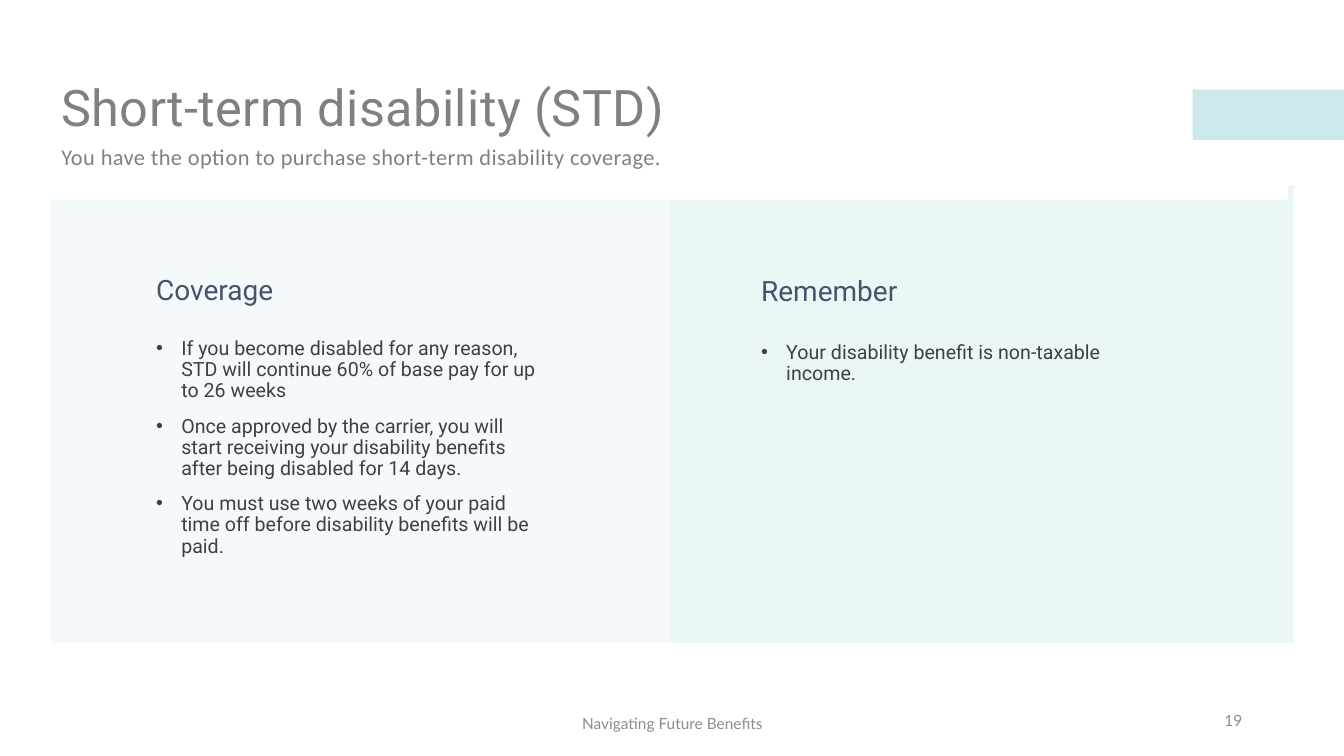
from lxml import etree
from pptx import Presentation
from pptx.dml.color import RGBColor
from pptx.enum.shapes import MSO_SHAPE
from pptx.enum.text import MSO_ANCHOR, PP_ALIGN
from pptx.oxml.ns import qn
from pptx.util import Inches, Pt

RECT = MSO_SHAPE.RECTANGLE
TOP, MIDDLE = MSO_ANCHOR.TOP, MSO_ANCHOR.MIDDLE
LEFT, CENTER, RIGHT = PP_ALIGN.LEFT, PP_ALIGN.CENTER, PP_ALIGN.RIGHT
TEAL, WHITE, GREY, NAVY, DARK, PALE = (
    "9CD3D9", "FFFFFF", "808080", "44546A", "404040", "8C8C8C")


def block(x, y, w, h, color, alpha=None):
    shape = slide.shapes.add_shape(RECT, Inches(x), Inches(y), Inches(w), Inches(h))
    shape.shadow.inherit = False
    shape.fill.solid()
    shape.fill.fore_color.rgb = RGBColor.from_string(color)
    if alpha is None:
        shape.line.color.rgb = RGBColor.from_string(color)
        shape.line.width = Pt(1)
    else:
        shape.line.fill.background()
        tint = shape.fill._xPr.find(".//" + qn("a:srgbClr"))
        etree.SubElement(tint, qn("a:alpha")).set("val", str(alpha * 1000))


def write(x, y, w, h, lines, size, font, color, anchor=MIDDLE, align=LEFT,
          ratio=0.9, track=0, bullet=False, box=None):
    box = box or slide.shapes.add_textbox(0, 0, 0, 0)
    box.left, box.top, box.width, box.height = Inches(x), Inches(y), Inches(w), Inches(h)
    frame = box.text_frame
    frame.word_wrap = True
    frame.vertical_anchor = anchor
    for i, line in enumerate(lines):
        para = frame.add_paragraph() if i else frame.paragraphs[0]
        para.text = line
        para.alignment = align
        para.line_spacing = ratio
        para.space_before = Pt(10 if i else 0)
        if bullet:
            props = para._p.get_or_add_pPr()
            props.set("marL", str(Inches(0.25)))
            props.set("indent", str(-Inches(0.25)))
            etree.SubElement(props, qn("a:buFont")).set("typeface", "Arial")
            etree.SubElement(props, qn("a:buChar")).set("char", "•")
        run = para.runs[0]
        run.font.size = Pt(size)
        run.font.name = font
        run.font.color.rgb = RGBColor.from_string(color)
        if track:
            run.font._element.set("spc", str(track))


deck = Presentation()
deck.slide_width, deck.slide_height = Inches(13.33), Inches(7.5)
slide = deck.slides.add_slide(deck.slide_layouts[5])

block(11.83, 0.89, 1.5, 0.5, TEAL, 50)
block(6.66, 1.84, 6.17, 5, TEAL, 20)
block(0.5, 1.84, 6.17, 5, TEAL, 10)
block(0.36, 1.68, 12.41, 0.3, WHITE)

write(0.51, 0.37, 11.5, 1.45, ["Short-term disability (STD)"], 36, "Roboto", GREY,
      track=30, box=slide.shapes.title)
write(0.51, 0.84, 8.31, 1.45,
      ["You have the option to purchase short-term disability coverage."],
      16, "Calibri", GREY, track=30)

panels = [
    (1.45, 2.44, 3.31, "Coverage", [
        "If you become disabled for any reason, STD will continue 60% of base pay for up to 26 weeks",
        "Once approved by the carrier, you will start receiving your disability benefits after being disabled for 14 days.",
        "You must use two weeks of your paid time off before disability benefits will be paid."]),
    (7.45, 2.45, 3.35, "Remember", [
        "Your disability benefit is non-taxable income."]),
]
for x, head, body, name, points in panels:
    write(x, head, 4, 0.9, [name], 20, "Roboto", NAVY)
    write(x, body, 4, 3, points, 14, "Roboto", DARK, anchor=TOP, bullet=True)

block(0.46, 6.39, 12.41, 0.56, WHITE)
write(4.42, 6.98, 4.5, 0.4, ["Navigating Future Benefits"], 11, "Lato", PALE,
      align=CENTER, ratio=1.0)
write(9.42, 6.95, 3, 0.4, ["19"], 11, "Lato", PALE, align=RIGHT, ratio=1.0)

deck.save("out.pptx")
